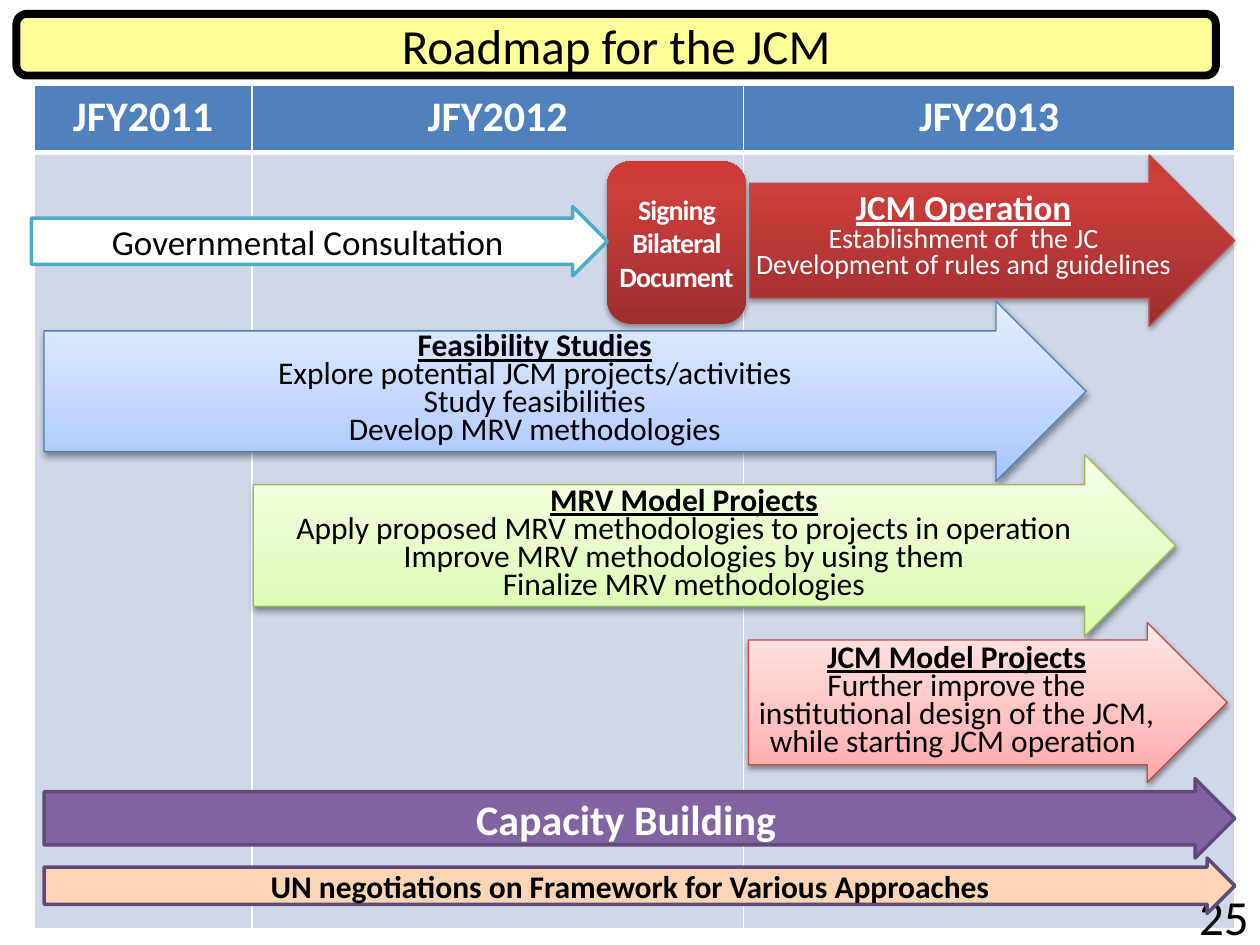
from lxml.etree import SubElement
from pptx import Presentation
from pptx.dml.color import RGBColor
from pptx.enum.shapes import MSO_SHAPE
from pptx.enum.text import MSO_ANCHOR, PP_ALIGN
from pptx.oxml.ns import qn
from pptx.util import Inches, Pt

THEME = dict(
    font="Calibri", black="000000", white="FFFFFF", title="FFFF99",
    header="4F81BD", body="D0D8E8", teal="4BACC6", purple="8064A2",
    plum="5F4A78", peach="FCD5B5", red_line="BF4C48", blue_line="4B7EBC",
    green_line="98B955",
    red=[(0, "9C2F2D"), (80, "CB3E3A"), (100, "CE3B37")],
    blue=[(0, "A4C4FF"), (35, "BFD4FF"), (100, "E6EEFF")],
    green=[(0, "DAFDA7"), (35, "E4FCC2"), (100, "F5FFE7")],
    pink=[(0, "FFA6A5"), (35, "FFC0BF"), (100, "FFE7E7")],
    huge=28, large=24, medium=20, normal=18, small=16,
)
T = THEME

prs = Presentation()
prs.slide_width, prs.slide_height = Inches(10), Inches(7.5)
s = prs.slides.add_slide(prs.slide_layouts[6])
X, Y = prs.slide_width / 100, prs.slide_height / 100


def write(tf, lines, size, color="black", bold=False, head=None,
          spacing=None, align=PP_ALIGN.CENTER, inset=(0.1, 0), wrap=True, track=0):
    tf.word_wrap = wrap
    tf.vertical_anchor = MSO_ANCHOR.MIDDLE
    tf.margin_left = tf.margin_right = Inches(inset[0])
    tf.margin_top = tf.margin_bottom = Inches(inset[1])
    for i, line in enumerate(lines):
        p = tf.paragraphs[0] if i == 0 else tf.add_paragraph()
        p.alignment = align
        if spacing:
            p.line_spacing = Pt(spacing)
        r = p.add_run()
        r.text = line
        is_head = bool(head) and i == 0
        r.font.name = T["font"]
        r.font.size = Pt(T[head if is_head else size])
        r.font.color.rgb = RGBColor.from_string(T[color])
        r.font.bold = bold or is_head
        r.font.underline = is_head
        if track:
            r._r.get_or_add_rPr().set("spc", str(track))


def add_box(kind, box, fill, line, width, adj, lines, size, shadow=0, **fmt):
    x, y, w, h = box
    sp = s.shapes.add_shape(kind, int(x * X), int(y * Y), int(w * X), int(h * Y))
    for i, value in enumerate(adj):
        sp.adjustments[i] = value
    if isinstance(T[fill], list):
        sp.fill.gradient()
        sp.fill.gradient_angle = 90
        stops = sp._element.spPr.find(".//" + qn("a:gsLst"))
        for old in list(stops):
            stops.remove(old)
        for pos, color in T[fill]:
            gs = SubElement(stops, qn("a:gs"), pos=str(pos * 1000))
            SubElement(gs, qn("a:srgbClr"), val=color)
    else:
        sp.fill.solid()
        sp.fill.fore_color.rgb = RGBColor.from_string(T[fill])
    if line:
        sp.line.color.rgb = RGBColor.from_string(T[line])
        sp.line.width = Pt(width)
    else:
        sp.line.fill.background()
    sp.shadow.inherit = False
    if shadow:
        effects = sp._element.spPr.find(qn("a:effectLst"))
        outer = SubElement(effects, qn("a:outerShdw"), blurRad=str(Pt(3.1)),
                           dist=str(Pt(1.7)), dir="5400000", rotWithShape="0")
        clr = SubElement(outer, qn("a:srgbClr"), val=T["black"])
        SubElement(clr, qn("a:alpha"), val=str(shadow * 1000))
    write(sp.text_frame, lines, size, **fmt)


ROUND, ARROW = MSO_SHAPE.ROUNDED_RECTANGLE, MSO_SHAPE.RIGHT_ARROW
SLIM, BROAD = (0.67, 0.5), (0.78, 0.5)

add_box(ROUND, (1.3, 1.47, 95.2, 6.53), "title", "black", 4.5, (0.17,),
        ["Roadmap for the JCM"], "huge", inset=(0.1, 0.05), wrap=False)

years = ["JFY2011", "JFY2012", "JFY2013"]
tbl = s.shapes.add_table(2, 3, int(2.7 * X), int(9.07 * Y),
                         int(95.3 * X), int(89.2 * Y)).table
for col, share in zip(tbl.columns, (17.3, 39, 39)):
    col.width = int(share * X)
for row, share in zip(tbl.rows, (7.07, 82.13)):
    row.height = int(share * Y)
for i in range(2):
    for j, year in enumerate(years):
        cell = tbl.cell(i, j)
        if i == 0:
            write(cell.text_frame, [year], "large", color="white", bold=True)
        tcPr = cell._tc.get_or_add_tcPr()
        for side in "LRTB":
            thick = (i, side) in ((0, "B"), (1, "T"))
            ln = SubElement(tcPr, qn("a:ln" + side), w=str(Pt(3 if thick else 1)))
            SubElement(SubElement(ln, qn("a:solidFill")), qn("a:srgbClr"), val=T["white"])
        cell.fill.solid()
        cell.fill.fore_color.rgb = RGBColor.from_string(T["body" if i else "header"])

add_box(ROUND, (48.2, 17.07, 11, 17.2), "red", None, 0, (0.17,),
        ["Signing Bilateral Document"], "small", shadow=35,
        color="white", bold=True, inset=(0, 0), track=-50)
add_box(ARROW, (59.5, 16.4, 38.5, 18.13), "red", "red_line", 0.75, SLIM,
        ["JCM Operation", "Establishment of  the JC",
         "Development of rules and guidelines"], "small", shadow=35,
        color="white", head="medium", spacing=15, inset=(0.04, 0))
add_box(ARROW, (3.5, 82.4, 94.5, 8.4), "purple", "plum", 2, SLIM,
        ["Capacity Building"], "large", color="white", bold=True)
add_box(ARROW, (2.5, 21.87, 45.7, 7.33), "white", "teal", 2, SLIM,
        ["Governmental Consultation"], "medium")

tb = s.shapes.add_textbox(int(76.8 * X), int(94.27 * Y), int(23.3 * X), int(5.33 * Y))
write(tb.text_frame, ["25"], "huge", align=PP_ALIGN.RIGHT, inset=(0.1, 0.05))

add_box(ARROW, (3.5, 90.8, 94.5, 5.87), "peach", "plum", 2, SLIM,
        ["UN negotiations on Framework for Various Approaches"], "normal", bold=True)

stages = [
    ((3.5, 31.87, 82.7, 19.07), "blue", "blue_line", SLIM, 0.1,
     ["Feasibility Studies", "Explore potential JCM projects/activities",
      "Study feasibilities", "Develop MRV methodologies"]),
    ((20.1, 48.13, 73.2, 19.2), "green", "green_line", SLIM, 0.1,
     ["MRV Model Projects",
      "Apply proposed MRV methodologies to projects in operation",
      "Improve MRV methodologies by using them", "Finalize MRV methodologies"]),
    ((59.4, 65.87, 38, 16.93), "pink", "red_line", BROAD, 0,
     ["JCM Model Projects",
      "Further improve the institutional design of the JCM, "
      "while starting JCM operation "]),
]
for box, fill, line, adj, side, lines in stages:
    add_box(ARROW, box, fill, line, 0.75, adj, lines, "normal", shadow=38,
            head="normal", spacing=16, inset=(side, 0))

prs.save("out.pptx")
